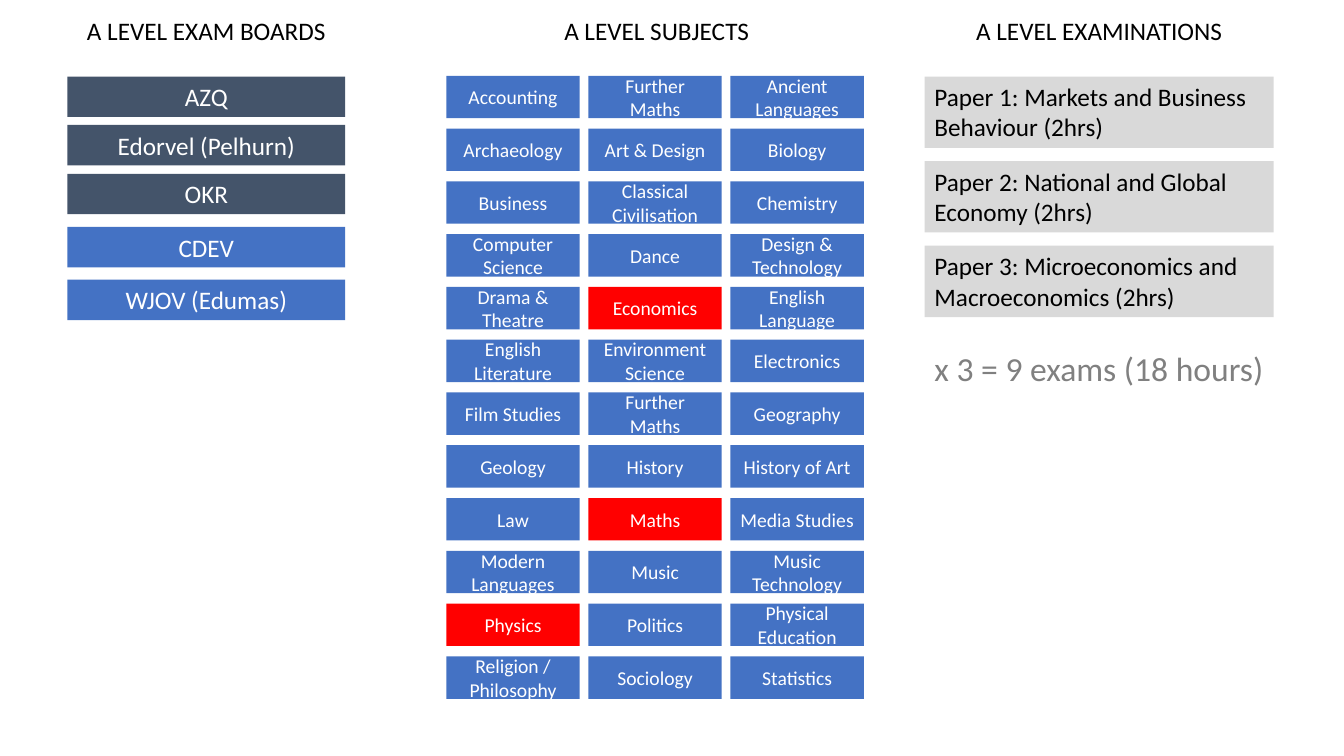
import pptx
import pptx.dml.color
import pptx.enum.shapes
import pptx.enum.text
import pptx.util

Cm = pptx.util.Cm
ALIGN = pptx.enum.text.PP_ALIGN
ANCHOR = pptx.enum.text.MSO_ANCHOR

BLUE, SLATE, RED, GREY = "4472C4", "44546A", "FF0000", "D9D9D9"
WHITE, BLACK = "FFFFFF", "000000"


def color(hex_string):
    return pptx.dml.color.RGBColor.from_string(hex_string)


def add_label(text, left, top, width, height, size=18, ink=BLACK, fill=None,
              align=ALIGN.CENTER, anchor=ANCHOR.TOP):
    """Add a filled rectangle with text, or a plain text box if fill is None."""
    place = Cm(left), Cm(top), Cm(width), Cm(height)
    if fill:
        box = page.shapes.add_shape(pptx.enum.shapes.MSO_SHAPE.RECTANGLE, *place)
        box.shadow.inherit = False
        box.fill.solid()
        box.fill.fore_color.rgb = color(fill)
        box.line.fill.background()
    else:
        box = page.shapes.add_textbox(*place)
    frame = box.text_frame
    frame.word_wrap = True
    frame.vertical_anchor = anchor
    frame.text = text
    for para in frame.paragraphs:
        para.alignment = align
        for span in para.runs:
            span.font.name = "Calibri"
            span.font.size = pptx.util.Pt(size)
            span.font.color.rgb = color(ink)


deck = pptx.Presentation()
deck.slide_width = Cm(33.87)
deck.slide_height = Cm(19.05)
page = deck.slides.add_slide(deck.slide_layouts[6])

# Headings
for heading, left in [("A LEVEL EXAM BOARDS", 0.97),
                      ("A LEVEL SUBJECTS", 12.32),
                      ("A LEVEL EXAMINATIONS", 23.47)]:
    add_label(heading, left, 0.25, 8.46, 1.02)

# Exam boards
boards = [
    ("AZQ", 1.93, SLATE),
    ("Edorvel (Pelhurn)", 3.15, SLATE),
    ("OKR", 4.38, SLATE),
    ("CDEV", 5.72, BLUE),
    ("WJOV (Edumas)", 7.05, BLUE),
]
for board, top, fill in boards:
    add_label(board, 1.7, top, 7, 1.02, ink=WHITE, fill=fill)

# Subjects, row by row
subjects = [
    ["Accounting", "Further Maths", "Ancient Languages"],
    ["Archaeology", "Art & Design", "Biology"],
    ["Business", "Classical Civilisation", "Chemistry"],
    ["Computer Science", "Dance", "Design & Technology"],
    ["Drama & Theatre", "Economics", "English Language"],
    ["English Literature", "Environment Science", "Electronics"],
    ["Film Studies", "Further Maths", "Geography"],
    ["Geology", "History", "History of Art"],
    ["Law", "Maths", "Media Studies"],
    ["Modern\nLanguages", "Music", "Music Technology"],
    ["Physics", "Politics", "Physical Education"],
    ["Religion / Philosophy", "Sociology", "Statistics"],
]
chosen = {"Economics", "Maths", "Physics"}
for row, names in enumerate(subjects):
    for column, subject in enumerate(names):
        add_label(subject, 11.25 + 3.58 * column, 1.91 + 1.33 * row, 3.36, 1.07,
                  size=14, ink=WHITE, fill=RED if subject in chosen else BLUE,
                  anchor=ANCHOR.MIDDLE)

# Examinations
papers = [
    "Paper 1: Markets and Business Behaviour (2hrs)",
    "Paper 2: National and Global Economy (2hrs)",
    "Paper 3: Microeconomics and Macroeconomics (2hrs)",
]
for row, paper in enumerate(papers):
    add_label(paper, 23.3, 1.93 + 2.13 * row, 8.8, 1.8, fill=GREY, align=ALIGN.LEFT)
add_label("x 3 = 9 exams (18 hours)", 22.92, 8.64, 9.55, 1.28, size=24, ink="808080")

deck.save("out.pptx")
